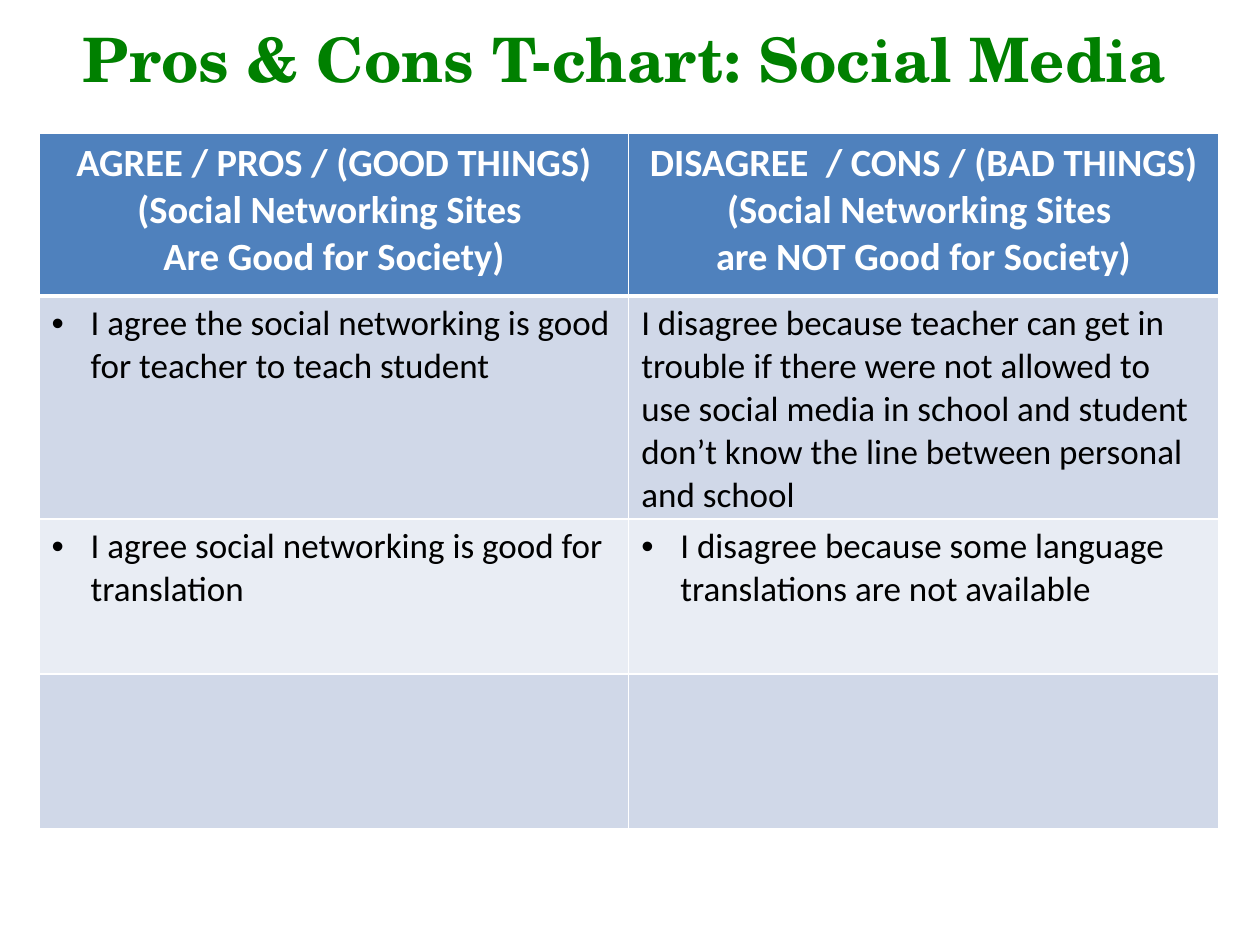
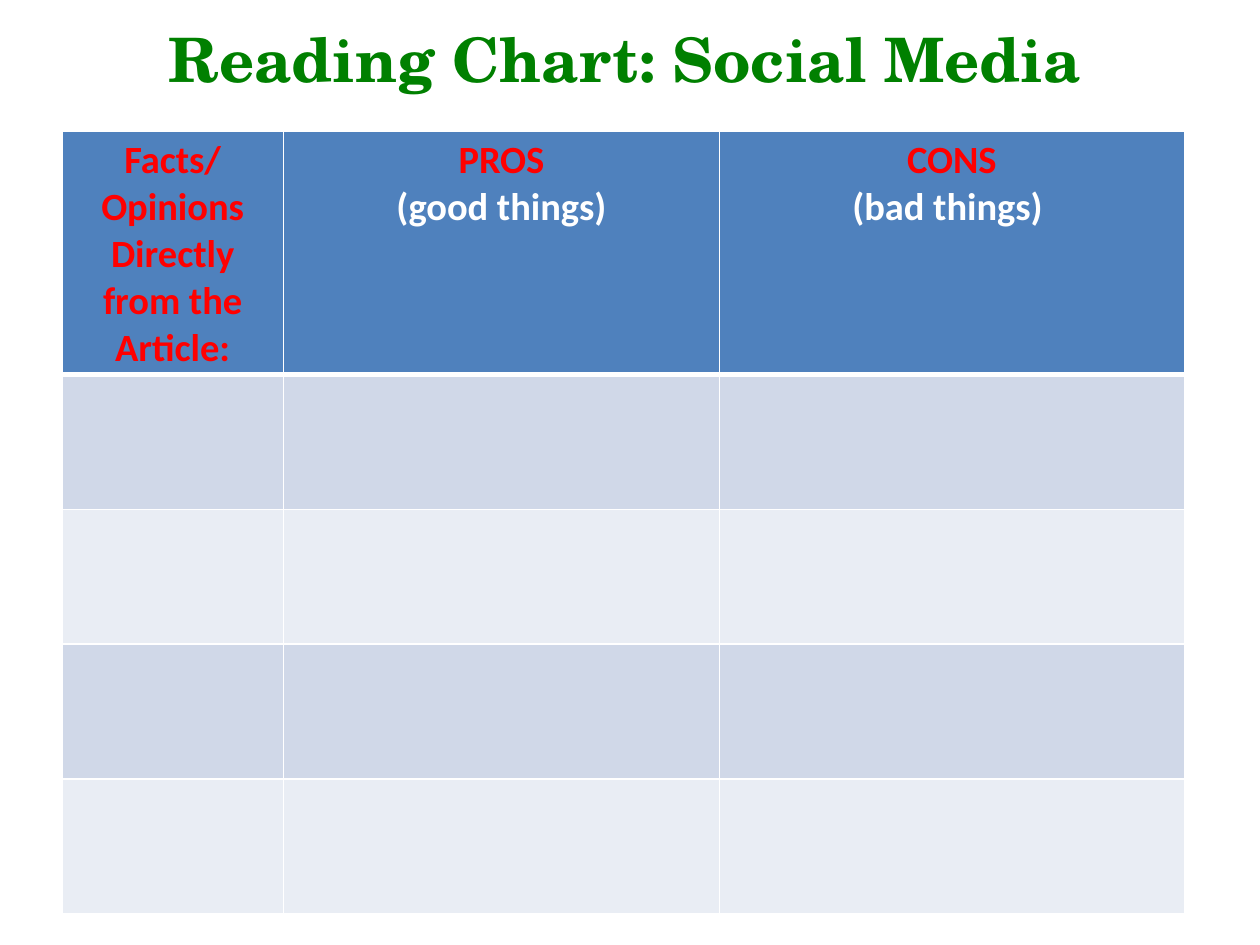
from lxml.etree import SubElement
from pptx import Presentation
from pptx.dml.color import RGBColor
from pptx.enum.text import PP_ALIGN as Align
from pptx.oxml.ns import qn
from pptx.util import Inches, Pt

WIDTH, HEIGHT = 10, 7.5
GREEN, RED, WHITE, BLACK = "008000", "FF0000", "FFFFFF", "000000"
HEADER, BANDS = "4F81BD", ("D0D8E8", "E9EDF4")
TITLE_FONT, BODY_FONT = "TeX Gyre Schola", "Calibri"
INDENT = Inches(0.31)


def rgb(value):
    return RGBColor.from_string(value)


def write(p, text, font=BODY_FONT, size=20, color=BLACK, bold=False, align=Align.LEFT, bullet=False):
    p.alignment = align
    r = p.add_run()
    r.text = text
    r.font.name, r.font.size, r.font.bold = font, Pt(size), bold
    r.font.color.rgb = rgb(color)
    if bullet:
        props = p._p.get_or_add_pPr()
        props.set("marL", str(INDENT))
        props.set("indent", str(-INDENT))
        SubElement(props, qn("a:buFont"), typeface="Arial")
        SubElement(props, qn("a:buChar"), char="•")


def add_title(s, text):
    box = s.shapes.add_textbox(Inches(0.51), Inches(0.12), Inches(8.9), Inches(0.69))
    tf = box.text_frame
    tf.word_wrap = True
    write(tf.paragraphs[0], text, font=TITLE_FONT, size=35, color=GREEN, bold=True, align=Align.CENTER)


def add_border(cell, side, width):
    line = SubElement(cell._tc.get_or_add_tcPr(), qn(f"a:ln{side}"), w=str(Pt(width)))
    fill = SubElement(line, qn("a:solidFill"))
    SubElement(fill, qn("a:srgbClr"), val=WHITE)


def style_cell(cell, row):
    widths = {"L": 1, "R": 1, "T": 3 if row == 1 else 1, "B": 3 if row == 0 else 1}
    for side, width in widths.items():
        add_border(cell, side, width)
    cell.fill.solid()
    cell.fill.fore_color.rgb = rgb(BANDS[(row - 1) % 2] if row else HEADER)


def fill_cell(cell, lines):
    tf = cell.text_frame
    for i, (text, style) in enumerate(lines):
        p = tf.add_paragraph() if i else tf.paragraphs[0]
        write(p, text, **style)


def add_grid(s, left, top, cols, rows, content):
    frame = s.shapes.add_table(len(rows), len(cols), Inches(left), Inches(top),
                               Inches(sum(cols)), Inches(sum(rows)))
    table = frame.table
    for column, width in zip(table.columns, cols):
        column.width = Inches(width)
    for i, height in enumerate(rows):
        table.rows[i].height = Inches(height)
        for j in range(len(cols)):
            style_cell(table.cell(i, j), i)
    for i, row in enumerate(content):
        for j, lines in enumerate(row):
            fill_cell(table.cell(i, j), lines)


def head(text, color=WHITE):
    return text, dict(size=22, color=color, bold=True, align=Align.CENTER)


def point(text, bullet=True):
    return text, dict(bullet=bullet)


def add_chart_slide(prs, title, *grid):
    s = prs.slides.add_slide(prs.slide_layouts[6])
    add_title(s, title)
    add_grid(s, *grid)


def main():
    prs = Presentation()
    prs.slide_width, prs.slide_height = Inches(WIDTH), Inches(HEIGHT)

    opinions = [
        [[head("AGREE / PROS / (GOOD THINGS)"),
          head("(Social Networking Sites "),
          head("Are Good for Society)")],
         [head("DISAGREE  / CONS / (BAD THINGS)"),
          head("(Social Networking Sites "),
          head("are NOT Good for Society)")]],
        [[point("I agree the social networking is good for teacher to teach student")],
         [point("I disagree because teacher can get in trouble if there were not allowed to use "
                "social media in school and student don’t know the line between personal and school",
                bullet=False)]],
        [[point("I agree social networking is good for translation")],
         [point("I disagree because some language translations are not available")]],
    ]
    add_chart_slide(prs, "Pros & Cons T-chart: Social Media",
                    0.31, 1.06, [4.68] * 2, [1.29, 1.77, 1.23, 1.23], opinions)

    headings = [[
        [head("Facts/Opinions Directly from the Article:", RED)],
        [head("PROS", RED), head("(good things)")],
        [head("CONS", RED), head("(bad things) ")],
    ]]
    add_chart_slide(prs, "Reading Chart: Social Media",
                    0.49, 1.04, [1.76, 3.46, 3.69], [1.93] + [1.07] * 4, headings)

    prs.save("out.pptx")


if __name__ == "__main__":
    main()
